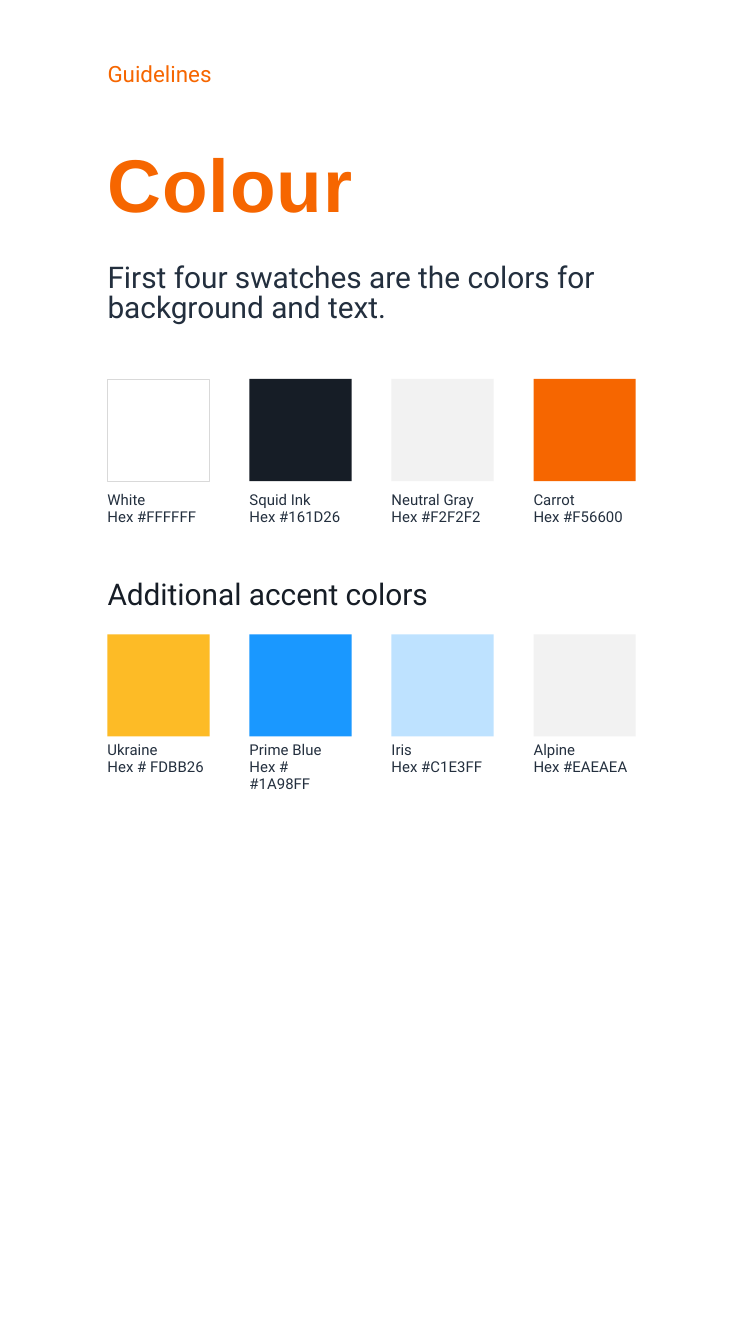
from collections import namedtuple
from dataclasses import dataclass

from lxml.etree import SubElement
from pptx import Presentation
from pptx.dml.color import RGBColor
from pptx.enum.shapes import MSO_SHAPE as Shape
from pptx.enum.text import MSO_ANCHOR as Anchor, MSO_AUTO_SIZE as AutoSize, PP_ALIGN as Align
from pptx.oxml.ns import qn
from pptx.util import Inches, Pt

Box = namedtuple("Box", "left top width height")
Swatch = namedtuple("Swatch", "name code fill outline", defaults=(None,))


@dataclass(frozen=True)
class Theme:
    heading_font: str = "Arial"
    text_font: str = "Roboto"
    white: str = "FFFFFF"
    ink: str = "161D26"
    slate: str = "232F3E"
    gray: str = "F2F2F2"
    outline: str = "D9D9D9"
    carrot: str = "F66600"
    title_size: int = 40
    lead_size: int = 16
    kicker_size: int = 12
    label_size: int = 8


THEME = Theme()

# Upright 9:16 page
PAGE_HEIGHT = 10
PAGE_WIDTH = PAGE_HEIGHT * 9 / 16

# Square swatches spread evenly over the grid width
MARGIN, TEXT_WIDTH, GRID_WIDTH = 0.8, 4.02, 3.93
SIDE, LABEL_HEIGHT = 0.76, 0.3

MAIN_SWATCHES = [
    Swatch("White", "Hex #FFFFFF", THEME.white, THEME.outline),
    Swatch("Squid Ink", "Hex #161D26", THEME.ink),
    Swatch("Neutral Gray", "Hex #F2F2F2", THEME.gray),
    Swatch("Carrot", "Hex #F56600", THEME.carrot),
]
ACCENT_SWATCHES = [
    Swatch("Ukraine", "Hex # FDBB26", "FDBB26"),
    Swatch("Prime Blue", "Hex # #1A98FF", "1A98FF"),
    Swatch("Iris", "Hex #C1E3FF", "BEE2FF"),
    Swatch("Alpine", "Hex #EAEAEA", THEME.gray),
]


def place(shape, box):
    shape.left, shape.top, shape.width, shape.height = map(Inches, box)


def write(shape, text, *, size, color, leading, font=THEME.text_font, bold=False, tracking=0):
    """Fill a text shape, one paragraph per line of text."""
    frame = shape.text_frame
    frame.text = text
    frame.word_wrap = True
    frame.auto_size = AutoSize.NONE
    frame.vertical_anchor = Anchor.TOP
    frame.margin_left = frame.margin_right = frame.margin_top = frame.margin_bottom = 0
    for para in frame.paragraphs:
        properties = para._p.get_or_add_pPr()
        properties.set("marL", "0")
        properties.set("indent", "0")
        SubElement(properties, qn("a:buNone"))
        para.alignment = Align.LEFT
        para.line_spacing = Pt(leading)
        para.space_before = para.space_after = Pt(0)
        for span in para.runs:
            span.font.name = font
            span.font.size = Pt(size)
            span.font.bold = bold
            span.font.color.rgb = RGBColor.from_string(color)
            if tracking:
                span.font._element.set("spc", str(int(tracking * 100)))


def add_text(page, box, text, **style):
    write(page.shapes.add_textbox(*map(Inches, box)), text, **style)


def add_header(page, box):
    # Section name, title and lead sentence
    add_text(page, Box(box.left, box.top, box.width, 0.24), "Guidelines",
             size=THEME.kicker_size, color=THEME.carrot, leading=12)

    title, body = page.shapes.title, page.placeholders[1]
    place(title, Box(box.left, box.top + 0.66, box.width, 0.6))
    write(title, "Colour", size=THEME.title_size, color=THEME.carrot, leading=40,
          font=THEME.heading_font, bold=True, tracking=0.5)

    place(body, Box(box.left, box.top + 1.49, box.width, 0.5))
    write(body, "First four swatches are the colors for background and text.",
          size=THEME.lead_size, color=THEME.slate, leading=16)


def add_swatch(page, box, swatch, gap):
    # Colour square
    square = page.shapes.add_shape(Shape.RECTANGLE, *map(Inches, box))
    square.shadow.inherit = False
    square.fill.solid()
    square.fill.fore_color.rgb = RGBColor.from_string(swatch.fill)
    if swatch.outline:
        square.line.color.rgb = RGBColor.from_string(swatch.outline)
        square.line.width = Pt(0.25)
    else:
        square.line.fill.background()

    # Name and code below it
    label_box = Box(box.left, box.top + box.height + gap, box.width, LABEL_HEIGHT)
    add_text(page, label_box, f"{swatch.name}\n{swatch.code}",
             size=THEME.label_size, color=THEME.slate, leading=9)


def add_swatch_row(page, box, swatches, gap):
    pitch = (box.width - box.height) / (len(swatches) - 1)
    for column, swatch in enumerate(swatches):
        cell = Box(box.left + column * pitch, box.top, box.height, box.height)
        add_swatch(page, cell, swatch, gap)


def main():
    deck = Presentation()
    deck.slide_width, deck.slide_height = Inches(PAGE_WIDTH), Inches(PAGE_HEIGHT)
    page = deck.slides.add_slide(deck.slide_layouts[1])
    page.background.fill.solid()
    page.background.fill.fore_color.rgb = RGBColor.from_string(THEME.white)

    add_header(page, Box(MARGIN, 0.48, TEXT_WIDTH, 2))
    add_swatch_row(page, Box(MARGIN, 2.82, GRID_WIDTH, SIDE), MAIN_SWATCHES, gap=0.08)
    add_text(page, Box(MARGIN, 4.38, TEXT_WIDTH, 0.21), "Additional accent colors",
             size=THEME.lead_size, color=THEME.ink, leading=12)
    add_swatch_row(page, Box(MARGIN, 4.72, GRID_WIDTH, SIDE), ACCENT_SWATCHES, gap=0.04)

    deck.save("out.pptx")


if __name__ == "__main__":
    main()
